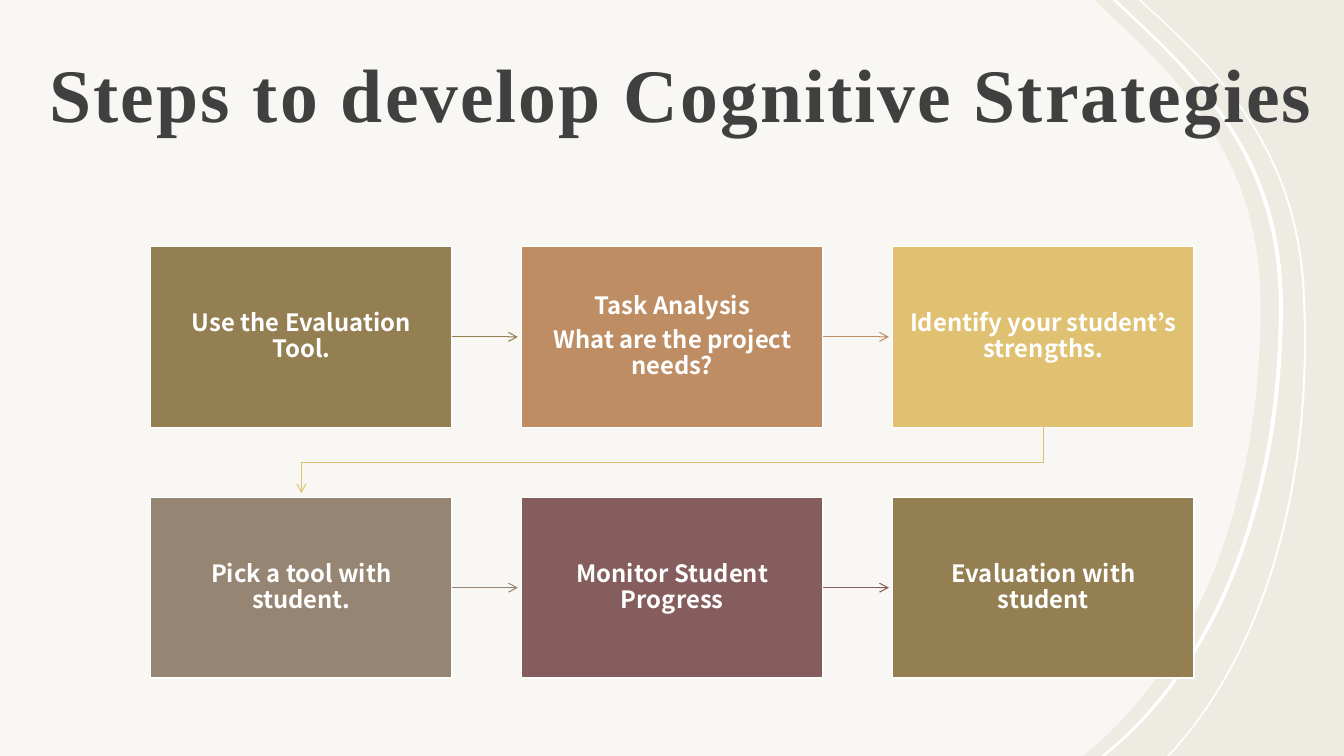
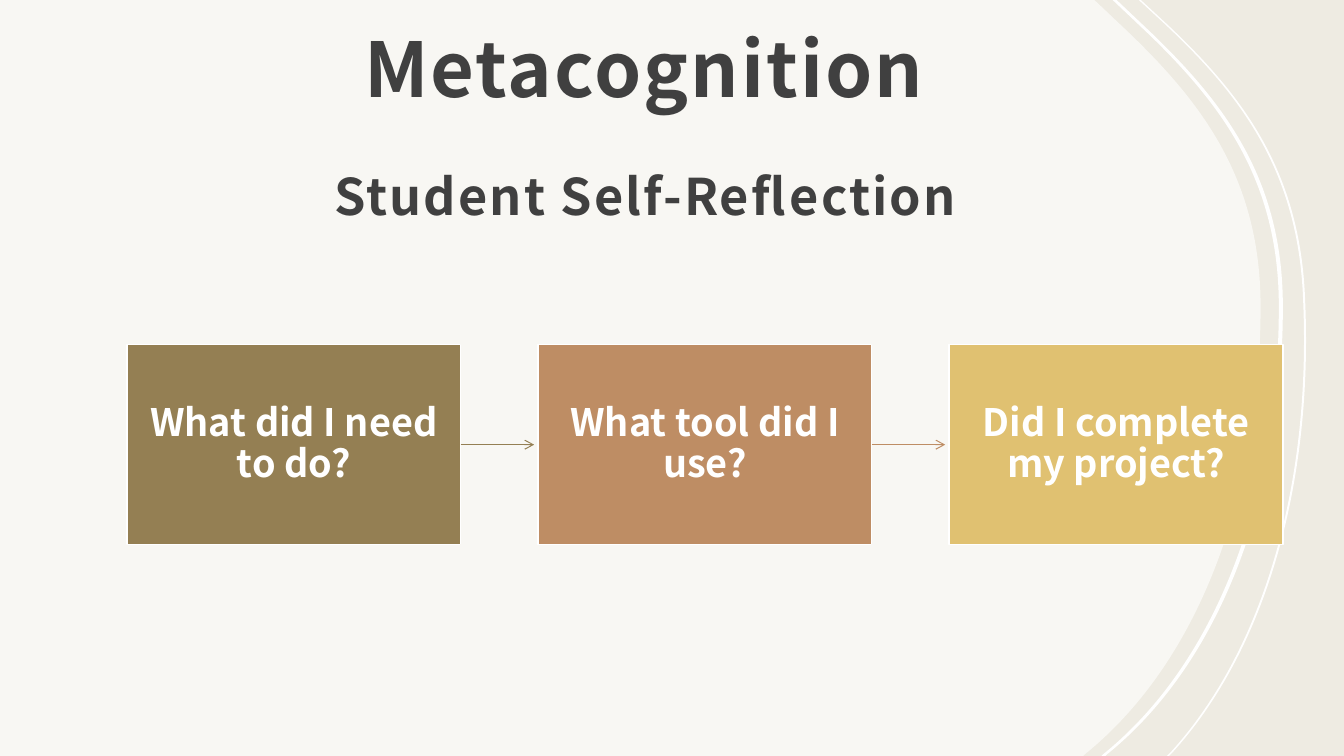
from lxml.etree import SubElement
from pptx import Presentation
from pptx.dml.color import RGBColor
from pptx.enum.shapes import MSO_CONNECTOR as Link, MSO_SHAPE as Kind
from pptx.enum.text import MSO_ANCHOR as Anchor, MSO_AUTO_SIZE as Fit, PP_ALIGN as Align
from pptx.oxml.ns import qn
from pptx.util import Cm, Pt

WHITE = RGBColor(0xFF, 0xFF, 0xFF)
CREAM = RGBColor(0xEE, 0xEB, 0xE2)
INK = RGBColor(0x40, 0x40, 0x40)
OLIVE = RGBColor(0x94, 0x7F, 0x53)
CLAY = RGBColor(0xBE, 0x8D, 0x64)
GOLD = RGBColor(0xE0, 0xC1, 0x71)
TAUPE = RGBColor(0x96, 0x85, 0x72)
PLUM = RGBColor(0x85, 0x5D, 0x5D)

SANS = "Noto Sans CJK JP"
SERIF = "Times New Roman"
HIGH = 19.05
GAP = 0.1  # space left between an arrow tip and its box

# Each edge: top, curve start, two Bezier curves, bottom (cm).
WIDE = [(28.04, 0), (28.98, 0.89), (30.78, 2.64), (32.23, 4.55), (32.23, 7.72),
        (32.23, 12.5), (30.66, 16.69), (27.81, 19), (27.76, HIGH)]
THIN = [(28.7, 0), (29.36, 0.61), (31.22, 2.36), (32.72, 4.27), (32.84, 7.54),
        (33.05, 12.19), (31.85, 16.38), (29.49, 18.97), (29.41, HIGH)]


def shift(edge, by):
    return [(x + by, y) for x, y in edge]


def outline(slide, points, curves=(), close=True):
    """Draw a path; each index in curves begins the three points of a Bezier."""
    (x, y), *rest = [(Cm(x), Cm(y)) for x, y in points]
    pen = slide.shapes.build_freeform(x, y)
    pen.add_line_segments(rest, close=close)
    shape = pen.convert_to_shape()
    shape.shadow.inherit = False
    lines = list(shape.element.iter(qn("a:lnTo")))
    for first in curves:
        trio = lines[first - 1:first + 2]
        curve = SubElement(trio[0].getparent(), qn("a:cubicBezTo"))
        trio[0].addprevious(curve)
        for line in trio:
            curve.append(line[0])
            line.getparent().remove(line)
    return shape


def backdrop(master, slide):
    """Draw the curved panel and its bands, then hand them to the master."""
    fill = master.background.fill
    fill.solid()
    fill.fore_color.rgb = CREAM
    panel = outline(slide, [(0, 0), *shift(WIDE, -0.46), (0, HIGH)], (3, 6))
    bands = [outline(slide, edge + shift(edge, thick)[::-1], (2, 5, 11, 14))
             for edge, thick in ((THIN, 0.05), (WIDE, 0.1))]
    for shape in (panel, *bands):
        shape.fill.solid()
        shape.fill.fore_color.rgb = WHITE
        shape.line.fill.background()
        master.shapes.element.append(shape.element)
    tone = panel.element.spPr.find(".//" + qn("a:srgbClr"))
    SubElement(tone, qn("a:alpha"), val="60000")


def write(shape, text, *, size, font=SANS, color=INK, align=Align.LEFT,
          anchor=Anchor.BOTTOM, inset=(0.3, 0.3, 0.3, 0.25), line=1.2,
          after=6, track=0):
    frame = shape.text_frame
    frame.text = text
    frame.word_wrap = True
    frame.auto_size = Fit.NONE
    frame.vertical_anchor = anchor
    (frame.margin_left, frame.margin_top,
     frame.margin_right, frame.margin_bottom) = map(Cm, inset)
    for para in frame.paragraphs:
        para.alignment = align
        para.line_spacing = line
        para.space_before = Pt(0)
        para.space_after = Pt(after)
        for run in para.runs:
            run.font.name = font
            run.font.size = Pt(size)
            run.font.bold = True
            run.font.color.rgb = color
    if track:
        for props in shape.element.iter(qn("a:rPr")):
            props.set("spc", str(round(track * 100)))


def head(slide, text, at, **style):
    title = slide.shapes.title
    title.left, title.top, title.width, title.height = map(Cm, at)
    write(title, text, size=54, track=1.5, **style)


def box(slide, text, color, at, size):
    shape = slide.shapes.add_shape(Kind.RECTANGLE, *map(Cm, at))
    shape.shadow.inherit = False
    shape.fill.solid()
    shape.fill.fore_color.rgb = color
    shape.line.color.rgb = WHITE
    shape.line.width = Pt(1)
    write(shape, text, size=size, color=WHITE, align=Align.CENTER,
          anchor=Anchor.MIDDLE, inset=(0.38,) * 4, line=0.9,
          after=round(size * 0.35))
    return shape


def tip(shape, color):
    """Style a line and put an arrowhead at its end."""
    shape.line.color.rgb = color
    shape.line.width = Pt(0.75)
    SubElement(shape.element.spPr.find(qn("a:ln")), qn("a:tailEnd"), type="arrow")


def arrow(slide, start, end, color):
    mid = start.top + start.height // 2
    link = slide.shapes.add_connector(
        Link.STRAIGHT, start.left + start.width, mid, end.left - Cm(GAP), mid)
    link.begin_connect(start, 3)
    tip(link, color)
    SubElement(link.element.spPr, qn("a:effectLst"))


def turn(slide, start, end, color):
    """Lead from the end of one row to the start of the next."""
    right, left = [(item.left + item.width / 2) / Cm(1) for item in (start, end)]
    top, low = (start.top + start.height) / Cm(1), end.top / Cm(1)
    mid = (top + low) / 2
    path = outline(slide, [(right, top), (right, mid), (left, mid),
                           (left, low - GAP)], close=False)
    path.fill.background()
    tip(path, color)


def flow(slide, steps, *, left, top, wide, high, across, down=0, size, cols=3):
    """Lay steps out in rows and join each to the next."""
    boxes = [box(slide, text, color,
                 (left + i % cols * across, top + i // cols * down, wide, high), size)
             for i, (text, color) in enumerate(steps)]
    for i, (start, end) in enumerate(zip(boxes, boxes[1:]), 1):
        join = arrow if i % cols else turn
        join(slide, start, end, steps[i - 1][1])


def main():
    deck = Presentation()
    deck.slide_width, deck.slide_height = Cm(33.87), Cm(HIGH)
    layout = deck.slide_layouts[5]

    plan = deck.slides.add_slide(layout)
    backdrop(deck.slide_master, plan)
    head(plan, "Steps to develop Cognitive Strategies",
         (0.95, 1.1, 32.92, 2.62), font=SERIF)
    flow(plan, [
        ("Use the Evaluation Tool.", OLIVE),
        ("Task Analysis\nWhat are the project needs?", CLAY),
        ("Identify your student’s strengths.", GOLD),
        ("Pick a tool with student.", TAUPE),
        ("Monitor Student Progress", PLUM),
        ("Evaluation with student", OLIVE),
    ], left=3.8, top=6.21, wide=7.59, high=4.56, across=9.35, down=6.32, size=17)

    review = deck.slides.add_slide(layout)
    head(review, "Metacognition", (8.88, 0.23, 15.82, 2.87))
    flow(review, [
        ("What did I need to do?", OLIVE),
        ("What tool did I use?", CLAY),
        ("Did I complete my project?", GOLD),
    ], left=3.2, top=8.68, wide=8.41, high=5.05, across=10.36, size=27)
    label = review.shapes.add_textbox(*map(Cm, (8.13, 3.07, 17.6, 2.87)))
    write(label, "Student Self-Reflection", size=36, track=1.5)

    deck.save("out.pptx")


if __name__ == "__main__":
    main()
